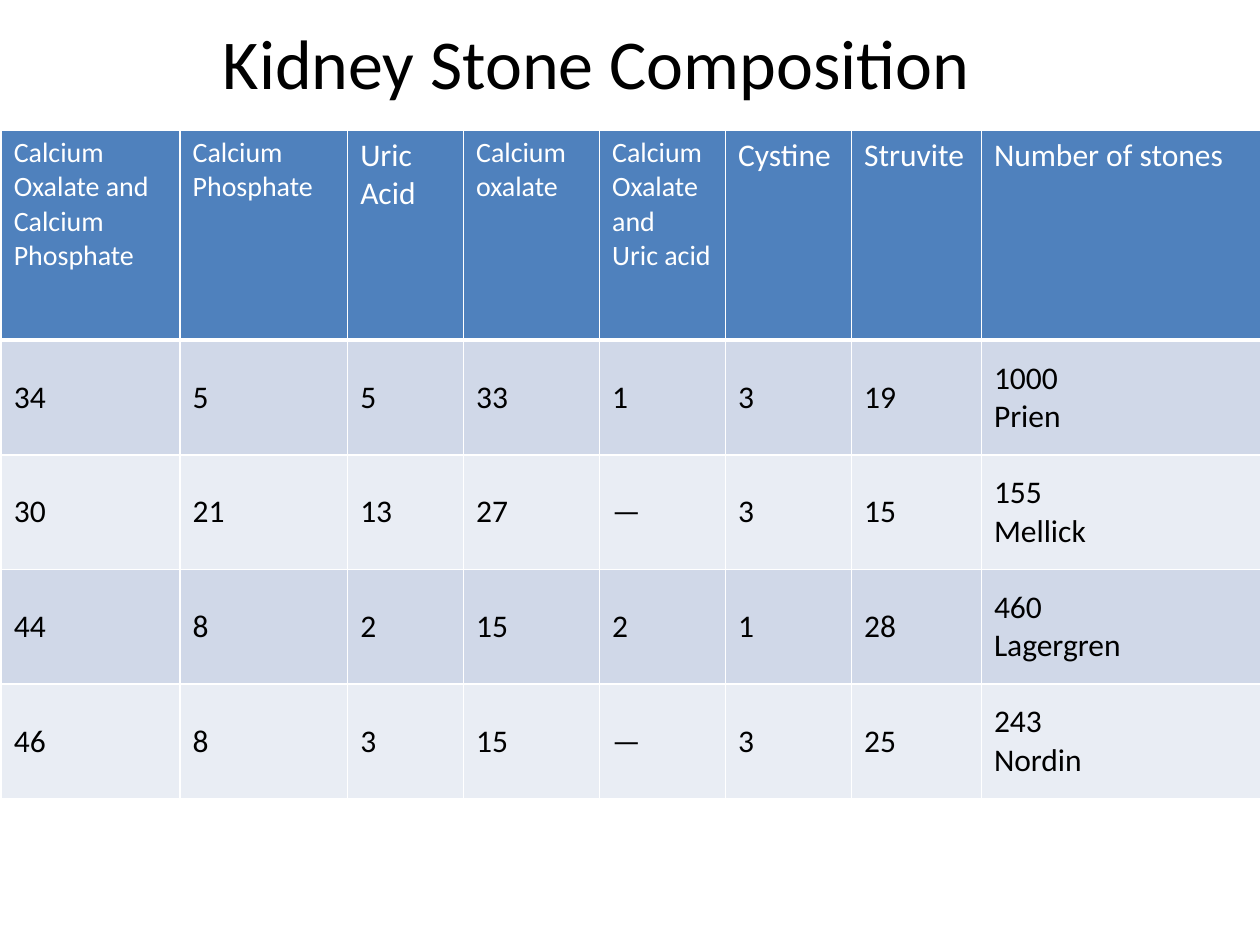
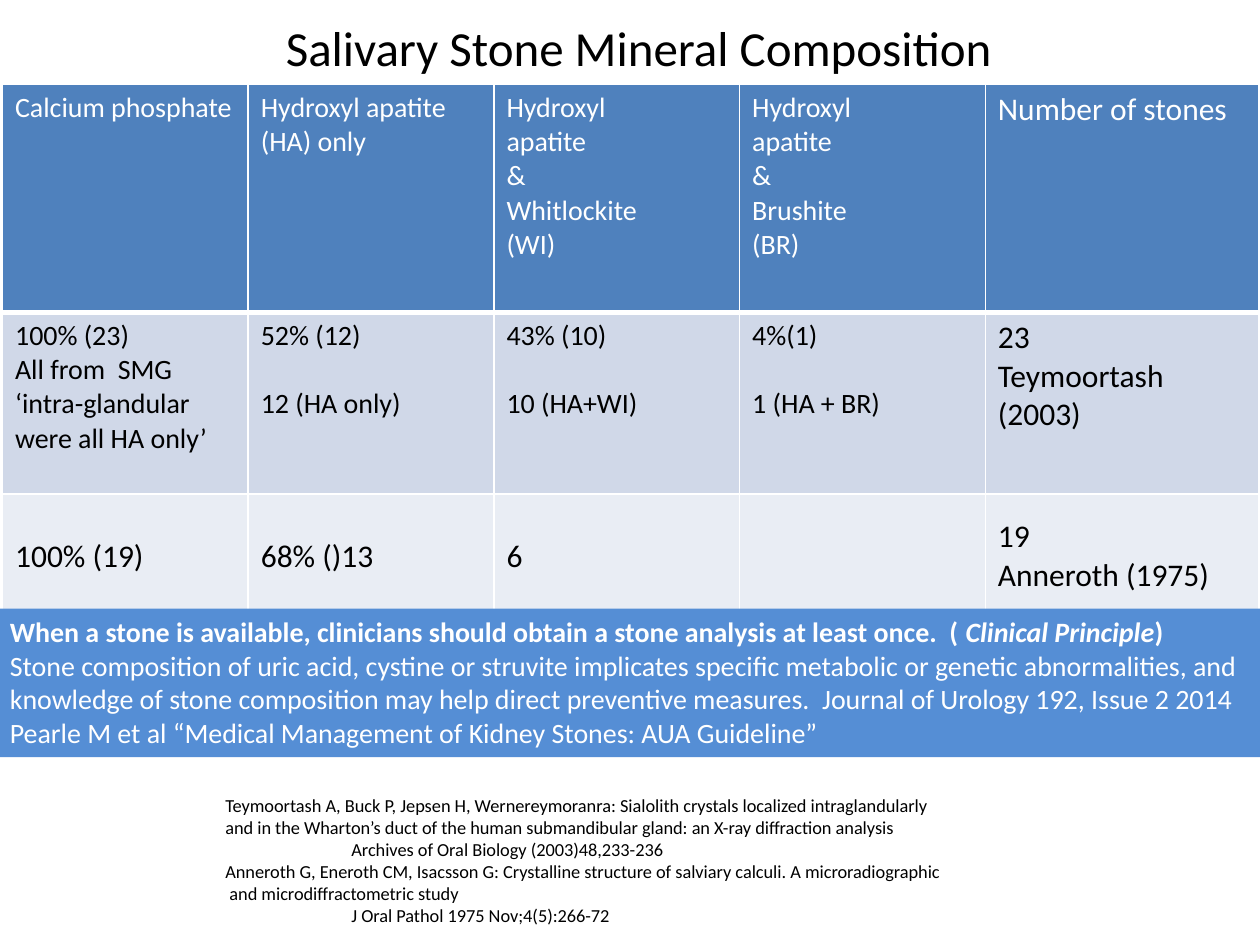
import pptx
import pptx.dml.color
import pptx.enum.shapes
import pptx.enum.text
import pptx.oxml.ns
import pptx.util
from lxml import etree

Inches = pptx.util.Inches
Pt = pptx.util.Pt
Anchor = pptx.enum.text.MSO_ANCHOR

FONT = "Calibri"
WHITE = "FFFFFF"
BLACK = "000000"
HEADER_BLUE = "4F81BD"
NOTE_BLUE = "558ED5"
BANDS = ("D0D8E8", "E9EDF4")

KIDNEY_COLUMNS = (1.42, 1.33, 0.92, 1.08, 1, 1, 1.03, 2.22)
KIDNEY_HEADER_SIZES = (16, 16, 18, 16, 16, 18, 18, 18)
KIDNEY_ROWS = (
    ("Calcium Oxalate and\nCalcium Phosphate", "Calcium Phosphate", "Uric Acid",
     "Calcium oxalate", "Calcium Oxalate and\nUric acid", "Cystine", "Struvite",
     "Number of stones"),
    ("34", "5", "5", "33", "1", "3", "19", "1000\nPrien"),
    ("30", "21", "13", "27", "—", "3", "15", "155\nMellick"),
    ("44", "8", "2", "15", "2", "1", "28", "460\nLagergren"),
    ("46", "8", "3", "15", "—", "3", "25", "243\nNordin"),
)

SALIVARY_COLUMNS = (1.95, 1.95, 1.95, 1.95, 2.17)
SALIVARY_SIZES = (16, 16, 16, 16, 18)
SALIVARY_ROWS = (
    ("Calcium phosphate", "Hydroxyl apatite\n(HA) only",
     "Hydroxyl\napatite\n&\nWhitlockite\n(WI)", "Hydroxyl\napatite\n&\nBrushite\n(BR)",
     "Number of stones"),
    ("100% (23)\nAll from  SMG\n‘intra-glandular  were all HA only’",
     "52% (12)\n\n12 (HA only)", "43% (10)\n\n10 (HA+WI)", "4%(1)\n\n1 (HA + BR)",
     "23\nTeymoortash (2003)"),
    ("100% (19)", "68% ()13", "6", "", "19\nAnneroth (1975)"),
)

REFERENCES = (
    ("Teymoortash A, Buck P, Jepsen H, Wernereymoranra: Sialolith crystals localized "
     "intraglandularly", 0),
    ("and in the Wharton’s duct of the human submandibular gland: an X-ray diffraction "
     "analysis", 0),
    ("Archives of Oral Biology (2003)48,233-236", 1),
    ("Anneroth G, Eneroth CM, Isacsson G: Crystalline structure of salviary calculi. "
     "A microradiographic", 0),
    (" and microdiffractometric study", 0),
    ("J Oral Pathol 1975 Nov;4(5):266-72", 1),
)

GUIDELINE = (
    (("When a stone is available, clinicians should obtain a stone analysis at least once.  ( ",
      True, False), ("Clinical Principle", True, True), (")", True, False)),
    (("Stone composition of uric acid, cystine or struvite implicates specific metabolic or "
      "genetic abnormalities, and knowledge of stone composition may help direct preventive "
      "measures.  Journal of Urology 192, Issue 2 2014 Pearle M et al “Medical Management of "
      "Kidney Stones: AUA Guideline”", False, False),),
)


def color(value):
    """Turn a hex string into a colour."""
    return pptx.dml.color.RGBColor.from_string(value)


def fill_with(thing, value):
    """Give a shape or cell a solid fill."""
    thing.fill.solid()
    thing.fill.fore_color.rgb = color(value)


def add_span(para, text, size, value, bold=False, italic=False):
    """Append one styled run to a paragraph."""
    span = para.add_run()
    span.text = text
    font = span.font
    font.name, font.size, font.bold, font.italic = FONT, Pt(size), bold, italic
    font.color.rgb = color(value)


def next_para(frame, index):
    """Return the first paragraph, or add one for later lines."""
    para = frame.paragraphs[0] if index == 0 else frame.add_paragraph()
    para.alignment = pptx.enum.text.PP_ALIGN.LEFT
    return para


def add_title(page, text, left, top, width, height, size):
    """Add a slide title on one line."""
    box = page.shapes.add_textbox(Inches(left), Inches(top), Inches(width), Inches(height))
    box.text_frame.word_wrap = False
    add_span(next_para(box.text_frame, 0), text, size, BLACK)


def add_panel(page, left, top, width, height, fill, wrap):
    """Add a plain filled rectangle and return its text frame."""
    panel = page.shapes.add_shape(pptx.enum.shapes.MSO_SHAPE.RECTANGLE, Inches(left),
                                  Inches(top), Inches(width), Inches(height))
    panel.shadow.inherit = False
    panel.line.fill.background()
    fill_with(panel, fill)
    panel.text_frame.word_wrap = wrap
    panel.text_frame.vertical_anchor = Anchor.TOP
    return panel.text_frame


def border_cell(cell, bottom):
    """Draw white borders around a cell, with its own bottom width."""
    properties = cell._tc.get_or_add_tcPr()
    for side, width in (("L", 1), ("R", 1), ("T", 1), ("B", bottom)):
        line = etree.SubElement(properties, pptx.oxml.ns.qn(f"a:ln{side}"), w=str(Pt(width)))
        solid = etree.SubElement(line, pptx.oxml.ns.qn("a:solidFill"))
        etree.SubElement(solid, pptx.oxml.ns.qn("a:srgbClr"), val=WHITE)


def write_cell(cell, text, size, value):
    """Write lines into a cell, with an empty line becoming space before the next."""
    for index, block in enumerate(text.split("\n\n")):
        for offset, line in enumerate(block.split("\n")):
            para = next_para(cell.text_frame, index + offset)
            if index and not offset:
                para.space_before = Pt(size * 1.2)
            if line:
                add_span(para, line, size, value)


def add_stone_table(page, left, top, columns, heights, rows, sizes, top_rows):
    """Add a banded table whose first top_rows rows are anchored at the top."""
    frame = page.shapes.add_table(len(rows), len(columns), Inches(left), Inches(top),
                                  Inches(sum(columns)), Inches(sum(heights)))
    table = frame.table
    for column, width in zip(table.columns, columns):
        column.width = Inches(width)
    for row_index, (texts, height) in enumerate(zip(rows, heights)):
        table.rows[row_index].height = Inches(height)
        header = row_index == 0
        for column_index, text in enumerate(texts):
            cell = table.cell(row_index, column_index)
            at_top = row_index < top_rows
            cell.vertical_anchor = Anchor.TOP if at_top else Anchor.MIDDLE
            border_cell(cell, 3 if header else 1)
            fill_with(cell, HEADER_BLUE if header else BANDS[(row_index - 1) % 2])
            write_cell(cell, text, sizes[column_index] if at_top else 18,
                       WHITE if header else BLACK)


def add_references(page):
    """Add the literature list with indented journal lines."""
    frame = add_panel(page, 1.69, 6.25, 5.98, 1.16, WHITE, False)
    for index, (text, indent) in enumerate(REFERENCES):
        para = next_para(frame, index)
        if indent:
            para._p.get_or_add_pPr().set("marL", str(Inches(indent)))
        add_span(para, text, 10.5, BLACK)


def add_guideline(page):
    """Add the clinical guideline band."""
    frame = add_panel(page, -0.02, 4.83, 10.02, 1.18, NOTE_BLUE, True)
    for index, spans in enumerate(GUIDELINE):
        para = next_para(frame, index)
        for text, bold, italic in spans:
            add_span(para, text, 16, WHITE, bold, italic)


def main():
    """Build the two stone composition slides."""
    deck = pptx.Presentation()
    deck.slide_width, deck.slide_height = Inches(10), Inches(7.5)
    blank = deck.slide_layouts[6]

    kidney = deck.slides.add_slide(blank)
    add_stone_table(kidney, 0.01, 1.03, KIDNEY_COLUMNS, (1.67,) + (0.91,) * 4,
                    KIDNEY_ROWS, KIDNEY_HEADER_SIZES, 1)
    add_title(kidney, "Kidney Stone Composition", 1.67, 0.11, 6.19, 0.77, 40)

    salivary = deck.slides.add_slide(blank)
    add_stone_table(salivary, 0.02, 0.67, SALIVARY_COLUMNS, (1.81, 1.44, 0.99),
                    SALIVARY_ROWS, SALIVARY_SIZES, 2)
    add_references(salivary)
    add_title(salivary, "Salivary Stone Mineral Composition", 2.17, 0.09, 5.86, 0.57, 28)
    add_guideline(salivary)

    deck.save("out.pptx")


if __name__ == "__main__":
    main()
